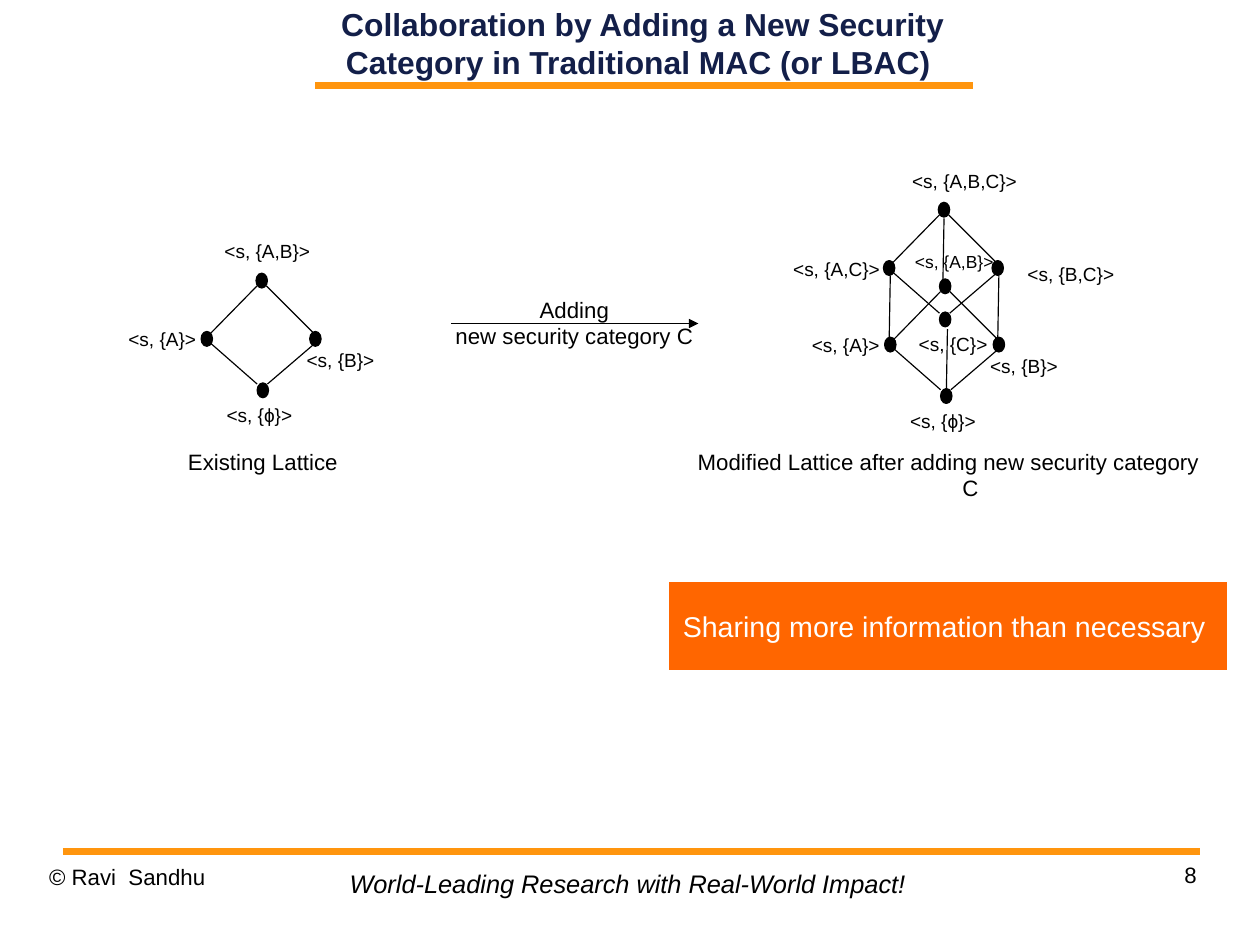
"""Build the slide on adding a security category to a lattice."""
from lxml.etree import SubElement
from pptx import Presentation
from pptx.dml.color import RGBColor
from pptx.enum.shapes import MSO_CONNECTOR as Line, MSO_SHAPE as Shape
from pptx.enum.text import MSO_ANCHOR as Anchor, MSO_AUTO_SIZE as Fit, PP_ALIGN as Align
from pptx.oxml.ns import qn
from pptx.util import Emu, Pt

PX = 9144
WIDE, HIGH = Emu(10080625), Emu(7559675)
HANG = 38
HUES = {"ink": "000000", "navy": "131F49", "gold": "FF950E",
        "orange": "FF6600", "white": "FFFFFF"}

TITLE = "Collaboration by Adding a New Security Category in Traditional MAC (or LBAC) "
TITLE_BOX = (241, 0, 643, 75)
RULES = [(276, 75, 851, 75), (55, 745, 1050, 745)]
ARROW = (395, 283, 611, 283)

NODE = (10, 13)
TOPS = [(224, 239), (821, 177), (822, 244)]
NODES = [(0, 0), (-48, 51), (47, 51), (1, 96)]
EDGES = [(1, 11, -42, 55), (-40, 61, 1, 97), (9, 11, 53, 55), (52, 61, 10, 97)]
RISERS = [(829, 288), (874, 241), (779, 241), (826, 191)]
RISE = (-1, 56)

LABELS = [
    ("A,B", 234, 205, 12), ("A", 142, 282, 12), ("ϕ", 227, 348, 12), ("B", 298, 300, 12),
    ("A,B,C", 844, 143, 12), ("A,C", 732, 220, 12), ("C", 834, 286, 12),
    ("B,C", 937, 225, 12), ("A,B", 835, 215, 11), ("A", 740, 287, 12),
    ("ϕ", 825, 353, 12), ("B", 896, 305, 12),
]
LABEL_W, LABEL_H = 126, 30

GROW = {"word_wrap": False, "auto_size": Fit.SHAPE_TO_FIT_TEXT}
FLAT = {"word_wrap": True, "margin_left": 0, "margin_right": 0,
        "margin_top": 0, "margin_bottom": 0}
MID = {"alignment": Align.CENTER}
NOTES = [
    (["8"], (790, 753, 257, 57), FLAT, {"alignment": Align.RIGHT, "line_spacing": 1.01}, {}, 0),
    (["© Ravi  Sandhu"], (43, 755, 257, 57), FLAT, {"line_spacing": 1.01}, {}, 0),
    (["World-Leading Research with Real-World Impact!"], (296, 755, 508, 37),
     GROW, {}, {"size": Pt(16), "italic": True}, 0),
    (["Adding", "new security category C"], (388, 254, 229, 57), GROW, MID, {}, HANG),
    (["Existing Lattice"], (154, 387, 152, 34), GROW, MID, {}, HANG),
    (["Modified Lattice after adding new security category C"], (592, 387, 476, 34),
     {**GROW, "word_wrap": True}, MID, {}, HANG),
]
ALERT = "Sharing more information than necessary "
ALERT_BOX = (585, 509, 489, 78)


def emu(nums):
    return [Emu(n * PX) for n in nums]


def rgb(hue):
    return RGBColor.from_string(HUES[hue])


def put(item, vals):
    for key, val in vals.items():
        setattr(item, key, val)


def write(frame, lines, look, para, font, hang=0, hue="ink"):
    put(frame, look)
    for i, text in enumerate(lines):
        p = frame.add_paragraph() if i else frame.paragraphs[0]
        put(p, para)
        if hang:
            props = p._p.get_or_add_pPr()
            props.set("marL", str(hang * PX))
            props.set("indent", str(-hang * PX))
        run = p.add_run()
        run.text = text
        put(run.font, {"name": "Arial", "size": Pt(14), **font})
        run.font.color.rgb = rgb(hue)


def draw(slide, ends, hue="ink", width=0.75, head=False):
    line = slide.shapes.add_connector(Line.STRAIGHT, *emu(ends))
    line.line.color.rgb = rgb(hue)
    line.line.width = Pt(width)
    if head:
        SubElement(line.line._get_or_add_ln(), qn("a:tailEnd"), type="triangle")
    SubElement(line._element.spPr, qn("a:effectLst"))


def block(slide, kind, box, fill, edge):
    shape = slide.shapes.add_shape(kind, *emu(box))
    shape.shadow.inherit = False
    shape.fill.solid()
    shape.fill.fore_color.rgb = rgb(fill)
    shape.line.color.rgb = rgb(edge)
    shape.line.width = Pt(0.75)
    return shape


def main():
    deck = Presentation()
    deck.slide_width = WIDE
    deck.slide_height = HIGH
    slide = deck.slides.add_slide(deck.slide_layouts[5])

    for ends in RULES:
        draw(slide, ends, "gold", 4.31)
    title = slide.shapes.title
    put(title, dict(zip(("left", "top", "width", "height"), emu(TITLE_BOX))))
    write(title.text_frame, [TITLE],
          {**FLAT, "auto_size": Fit.NONE, "vertical_anchor": Anchor.MIDDLE},
          MID, {"size": Pt(20), "bold": True}, hue="navy")

    draw(slide, ARROW, head=True)
    for x, y in TOPS:
        for a, b, c, d in EDGES:
            draw(slide, (x + a, y + b, x + c, y + d))
        for dx, dy in NODES:
            block(slide, Shape.OVAL, (x + dx, y + dy, *NODE), "ink", "ink")
    for x, y in RISERS:
        draw(slide, (x, y, x + RISE[0], y + RISE[1]))

    for name, mid, top, size in LABELS:
        box = slide.shapes.add_textbox(*emu((mid - LABEL_W // 2, top, LABEL_W, LABEL_H)))
        write(box.text_frame, [f"<s, {{{name}}}>"], {**GROW, "word_wrap": True},
              MID, {"size": Pt(size)}, HANG)
    for lines, place, look, para, font, hang in NOTES:
        box = slide.shapes.add_textbox(*emu(place))
        write(box.text_frame, lines, look, para, font, hang)

    alert = block(slide, Shape.RECTANGLE, ALERT_BOX, "orange", "white")
    write(alert.text_frame, [ALERT],
          {"word_wrap": False, "vertical_anchor": Anchor.MIDDLE},
          MID, {"size": Pt(18)}, HANG, "white")
    deck.save("out.pptx")


if __name__ == "__main__":
    main()
